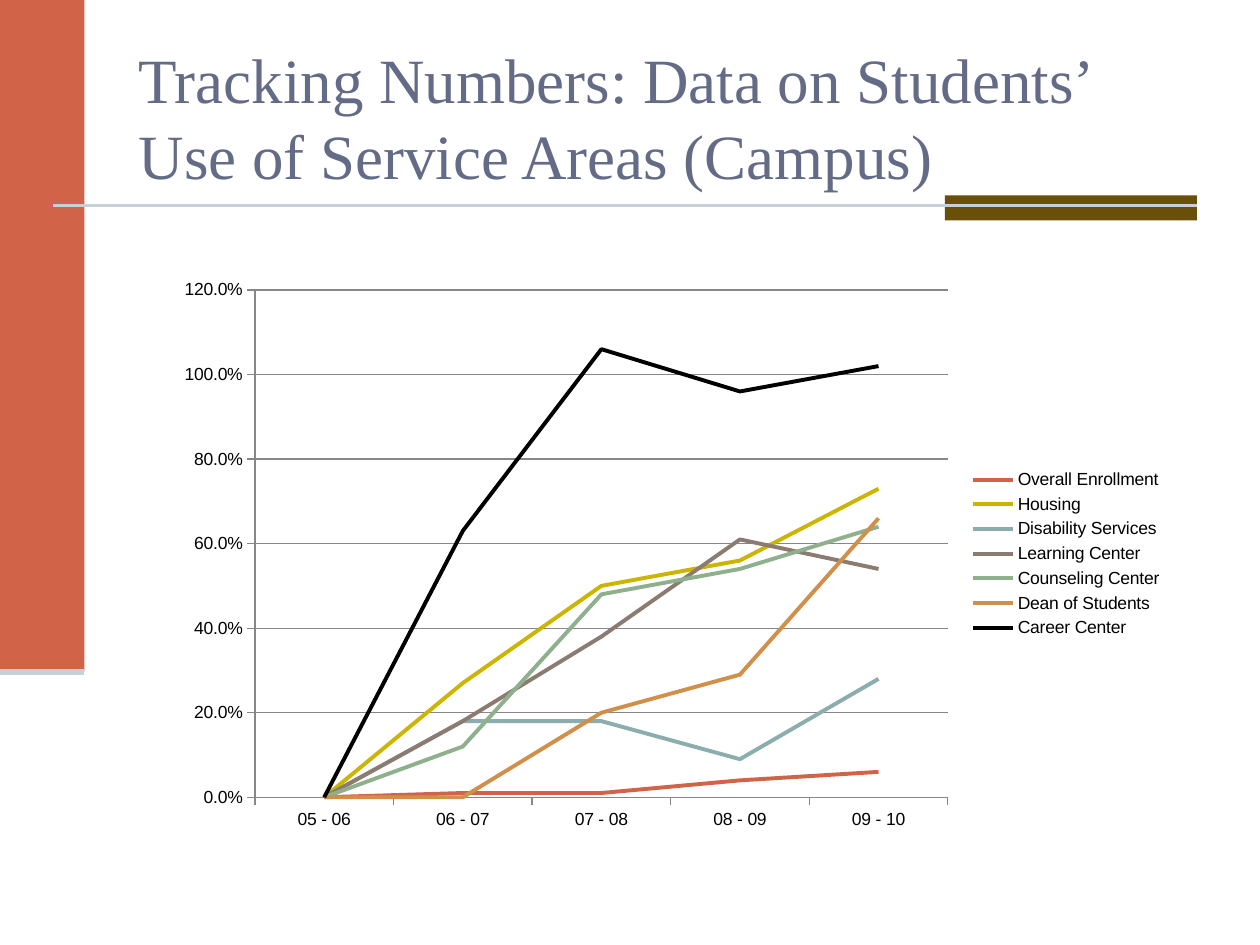
import pptx
import pptx.chart.data
import pptx.dml.color
import pptx.enum.chart
import pptx.enum.shapes
import pptx.enum.text
import pptx.oxml
import pptx.oxml.ns
import pptx.util

WIDE, HIGH = 10, 7.5
CORAL, BROWN, MIST, SLATE, GREY = "D16349", "694F07", "C5D1D7", "646B86", "878787"
YEARS = ["05 - 06", "06 - 07", "07 - 08", "08 - 09", "09 - 10"]
AREAS = [
    ("Overall Enrollment", CORAL, [0, 0.01, 0.01, 0.04, 0.06]),
    ("Housing", "CCB400", [0, 0.27, 0.5, 0.56, 0.73]),
    ("Disability Services", "8CADAE", [0, 0.18, 0.18, 0.09, 0.28]),
    ("Learning Center", "8C7B70", [0, 0.18, 0.38, 0.61, 0.54]),
    ("Counseling Center", "8FB08C", [0, 0.12, 0.48, 0.54, 0.64]),
    ("Dean of Students", "D19049", [0, 0, 0.2, 0.29, 0.66]),
    ("Career Center", "000000", [0, 0.63, 1.06, 0.96, 1.02]),
]


def tint(code):
    return pptx.dml.color.RGBColor.from_string(code)


class Page:
    """Draws styled elements on one slide, placed on a grid of 10 columns and 7.5 rows."""

    def __init__(self, deck):
        self.col = deck.slide_width / WIDE
        self.row = deck.slide_height / HIGH
        self.slide = deck.slides.add_slide(deck.slide_layouts[5])
        self.shapes = self.slide.shapes

    def place(self, left, top, wide, high):
        return (int(left * self.col), int(top * self.row),
                int(wide * self.col), int(high * self.row))

    def title(self, text, box):
        head = self.shapes.title
        head.left, head.top, head.width, head.height = self.place(*box)
        frame = head.text_frame
        frame.text = text
        frame.word_wrap = True
        frame.auto_size = pptx.enum.text.MSO_AUTO_SIZE.NONE
        frame.vertical_anchor = pptx.enum.text.MSO_ANCHOR.MIDDLE
        para = frame.paragraphs[0]
        para.alignment = pptx.enum.text.PP_ALIGN.LEFT
        para.font.name = "Times New Roman"
        para.font.size = pptx.util.Pt(36)
        para.font.color.rgb = tint(SLATE)

    def block(self, box, fill):
        block = self.shapes.add_shape(
            pptx.enum.shapes.MSO_SHAPE.RECTANGLE, *self.place(*box))
        block.shadow.inherit = False
        block.fill.solid()
        block.fill.fore_color.rgb = tint(fill)
        block.line.fill.background()

    def rule(self, left, right, top, weight):
        rule = self.shapes.add_connector(
            pptx.enum.shapes.MSO_CONNECTOR.STRAIGHT,
            *self.place(left, top, right, top))
        self.stroke(rule.line, MIST, weight)
        rule._element.spPr.append(pptx.oxml.parse_xml(
            f'<a:effectLst {pptx.oxml.ns.nsdecls("a")}/>'))

    def stroke(self, line, code, weight):
        line.color.rgb = tint(code)
        line.width = pptx.util.Pt(weight)

    def graph(self, box, plot):
        data = pptx.chart.data.CategoryChartData(number_format="0.0%")
        data.categories = YEARS
        for name, _, vals in AREAS:
            data.add_series(name, vals)
        chart = self.shapes.add_chart(
            pptx.enum.chart.XL_CHART_TYPE.LINE, *self.place(*box), data).chart
        chart.has_title = False
        chart.font.name = "Arial"
        chart.font.size = pptx.util.Pt(10)
        chart.font.color.rgb = tint("000000")
        chart.plots[0].vary_by_categories = False
        for line, (_, code, _) in zip(chart.plots[0].series, AREAS):
            line.smooth = False
            line.marker.style = pptx.enum.chart.XL_MARKER_STYLE.NONE
            self.stroke(line.format.line, code, 2.25)
        for axis in (chart.category_axis, chart.value_axis):
            axis.major_tick_mark = pptx.enum.chart.XL_TICK_MARK.OUTSIDE
            self.stroke(axis.format.line, GREY, 0.75)
        scale = chart.value_axis
        scale.minimum_scale, scale.maximum_scale, scale.major_unit = 0, 1.2, 0.2
        scale.has_major_gridlines = True
        self.stroke(scale.major_gridlines.format.line, GREY, 0.75)
        scale.tick_labels.number_format = "0.0%"
        scale.tick_labels.number_format_is_linked = False
        chart.has_legend = True
        chart.legend.position = pptx.enum.chart.XL_LEGEND_POSITION.RIGHT
        chart.legend.include_in_layout = False
        self.layout(chart, plot)

    def layout(self, chart, plot):
        modes = "".join(f'<c:{side}Mode val="edge"/>' for side in "xy")
        sizes = "".join(f'<c:{side} val="{share}"/>' for side, share in zip("xywh", plot))
        area = chart._chartSpace.chart.plotArea
        for old in area.findall(pptx.oxml.ns.qn("c:layout")):
            area.remove(old)
        area.insert(0, pptx.oxml.parse_xml(
            f'<c:layout {pptx.oxml.ns.nsdecls("c")}><c:manualLayout>'
            f'<c:layoutTarget val="inner"/>{modes}{sizes}'
            '</c:manualLayout></c:layout>'))


def main():
    deck = pptx.Presentation()
    deck.slide_width = pptx.util.Inches(WIDE)
    deck.slide_height = pptx.util.Inches(HIGH)
    page = Page(deck)
    page.block((0, 0, 0.67, 5.33), CORAL)
    page.block((7.5, 1.55, 2, 0.2), BROWN)
    page.rule(0.42, 9.5, 1.63, 1.5)
    page.rule(0, 0.67, 5.33, 3.5)
    page.title("Tracking Numbers: Data on Students’ Use of Service Areas (Campus)",
               (1, 0.3, 8.5, 1.25))
    page.graph((1.3, 2.12, 8.03, 4.55), (0.09, 0.04, 0.685, 0.885))
    deck.save("out.pptx")


if __name__ == "__main__":
    main()
